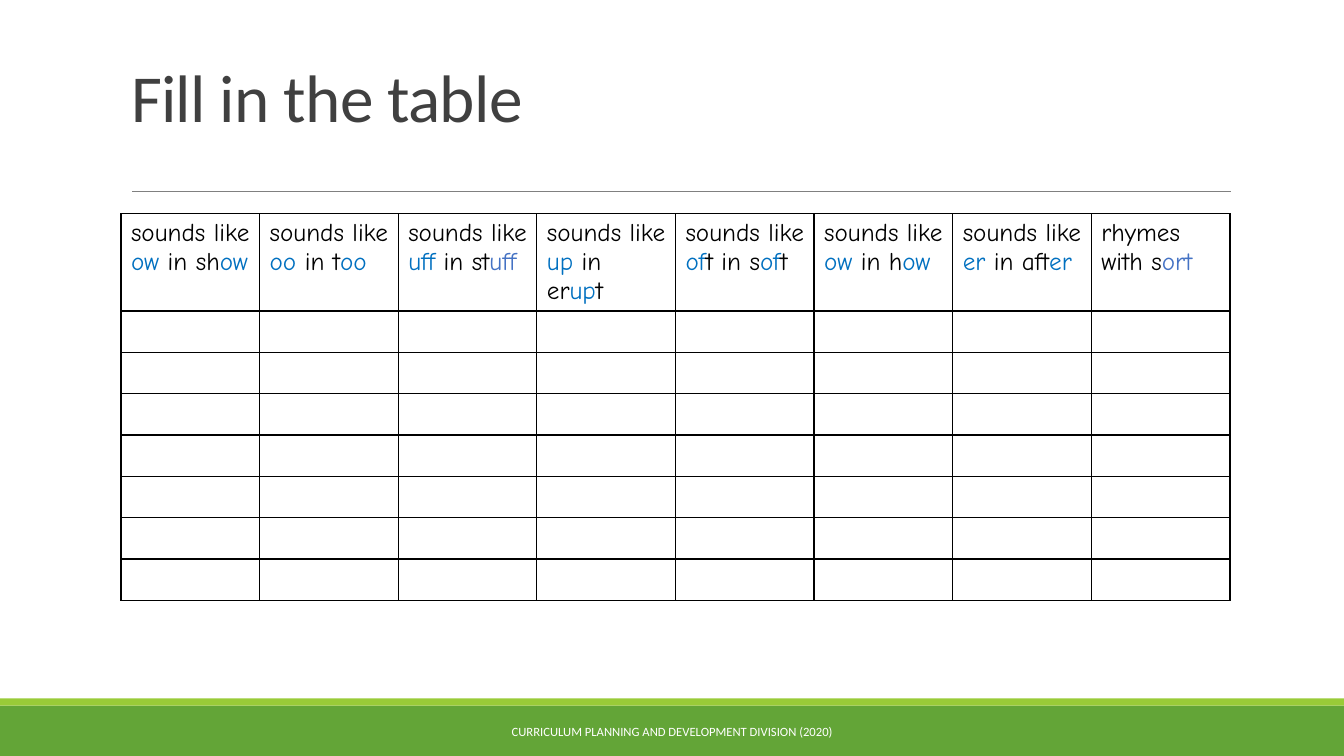
"""Build a word-sound sorting table slide."""
import dataclasses
import pptx
import pptx.util
import pptx.oxml
import pptx.dml.color
import pptx.enum.text
import pptx.enum.shapes
import pptx.oxml.ns

TITLE = "Fill in the table"
FOOT = "CURRICULUM PLANNING AND DEVELOPMENT DIVISION (2020)"
HEADS = [
    [("sounds like ", "ink"), ("ow", "blue"), (" in sh", "ink"), ("ow", "blue")],
    [("sounds like ", "ink"), ("oo", "blue"), (" in t", "ink"), ("oo", "blue")],
    [("sounds like ", "ink"), ("uff", "blue"), (" in st", "ink"), ("uff", "soft")],
    [("sounds like ", "ink"), ("up", "blue"), (" in er", "ink"), ("up", "blue"), ("t", "ink")],
    [("sounds like ", "ink"), ("of", "blue"), ("t in s", "ink"), ("of", "blue"), ("t", "ink")],
    [("sounds like ", "ink"), ("ow", "blue"), (" in h", "ink"), ("ow", "blue")],
    [("sounds like ", "ink"), ("er", "blue"), (" in aft", "ink"), ("er", "blue")],
    [("rhymes with s", "ink"), ("ort", "soft")],
]
ROWS = 8
WIDE, HIGH = 13.33, 7.5
LEFT, SPAN = 1.2, 11
ROW = 0.41
BAND, STRIP = 0.5, 0.07


@dataclasses.dataclass(frozen=True)
class Theme:
    """Hold colours, fonts and type sizes."""
    ink: str = "000000"
    blue: str = "0070C0"
    soft: str = "4472C4"
    head: str = "404040"
    rule: str = "808080"
    green: str = "63A537"
    lime: str = "99CB38"
    white: str = "FFFFFF"
    sans: str = "Calibri"
    hand: str = "Comic Neue"
    big: int = 48
    mid: int = 18
    small: int = 9


THEME = Theme()
RGB = pptx.dml.color.RGBColor.from_string
INCH = pptx.util.Inches
ANCHOR = pptx.enum.text.MSO_ANCHOR
ALIGN = pptx.enum.text.PP_ALIGN


def box(*sizes):
    """Turn inches into lengths."""
    return [INCH(size) for size in sizes]


def style(font, face, size, color=None):
    """Set face, size and colour of a font."""
    font.name, font.size = face, pptx.util.Pt(size)
    if color:
        font.color.rgb = RGB(color)


def add_bar(slide, top, tall, color):
    """Add a full-width bar."""
    bar = slide.shapes.add_shape(
        pptx.enum.shapes.MSO_SHAPE.RECTANGLE, *box(0, top, WIDE, tall))
    bar.shadow.inherit = False
    bar.fill.solid()
    bar.fill.fore_color.rgb = RGB(color)
    bar.line.fill.background()


def add_rule(slide):
    """Add the thin line under the title."""
    rule = slide.shapes.add_connector(
        pptx.enum.shapes.MSO_CONNECTOR.STRAIGHT, *box(1.31, 1.9, 12.21, 1.9))
    rule.line.color.rgb = RGB(THEME.rule)
    rule.line.width = pptx.util.Pt(0.5)
    props = rule.element.xpath("./p:spPr")[0]
    props.append(pptx.oxml.parse_xml(
        f'<a:effectLst {pptx.oxml.ns.nsdecls("a")}/>'))


def set_title(slide):
    """Place and format the title."""
    title = slide.shapes.title
    title.left, title.top, title.width, title.height = box(LEFT, 0.31, SPAN, 1.09)
    frame = title.text_frame
    frame.text = TITLE
    frame.word_wrap = True
    frame.auto_size = pptx.enum.text.MSO_AUTO_SIZE.NONE
    frame.vertical_anchor = ANCHOR.BOTTOM
    para = frame.paragraphs[0]
    para.alignment, para.line_spacing = ALIGN.LEFT, 0.85
    style(para.font, THEME.sans, THEME.big, THEME.head)
    title.element.xpath(".//a:defRPr")[0].set("spc", "-50")


def add_edges(cell):
    """Clear the fill and draw all four borders."""
    cell.fill.background()
    props = cell.fill._xPr
    for spot, side in enumerate(("lnL", "lnR", "lnT", "lnB")):
        props.insert(spot, pptx.oxml.parse_xml(
            f'<a:{side} {pptx.oxml.ns.nsdecls("a")} w="12700"><a:solidFill>'
            f'<a:srgbClr val="{THEME.ink}"/></a:solidFill></a:{side}>'))


def add_grid(slide):
    """Add the table with its coloured headings."""
    grid = slide.shapes.add_table(
        ROWS, len(HEADS), *box(LEFT, 2.12, SPAN, ROWS * ROW)).table
    grid.first_row = grid.horz_banding = False
    for cell in grid.iter_cells():
        add_edges(cell)
    for col, parts in enumerate(HEADS):
        para = grid.cell(0, col).text_frame.paragraphs[0]
        style(para.font, THEME.hand, THEME.mid)
        for text, tone in parts:
            run = para.add_run()
            run.text = text
            style(run.font, THEME.hand, THEME.mid, getattr(THEME, tone))


def add_foot(slide):
    """Add the centred footer text."""
    frame = slide.shapes.add_textbox(*box(4.03, 7.06, 5.27, 0.4)).text_frame
    frame.word_wrap = True
    frame.vertical_anchor = ANCHOR.MIDDLE
    para = frame.paragraphs[0]
    para.text, para.alignment = FOOT, ALIGN.CENTER
    style(para.font, THEME.sans, THEME.small, THEME.white)


def main():
    """Build and save the slide."""
    deck = pptx.Presentation()
    deck.slide_width, deck.slide_height = box(WIDE, HIGH)
    slide = deck.slides.add_slide(deck.slide_layouts[5])
    add_bar(slide, HIGH - BAND, BAND, THEME.green)
    add_bar(slide, HIGH - BAND - STRIP, STRIP, THEME.lime)
    add_rule(slide)
    set_title(slide)
    add_grid(slide)
    add_foot(slide)
    deck.save("out.pptx")


if __name__ == "__main__":
    main()
